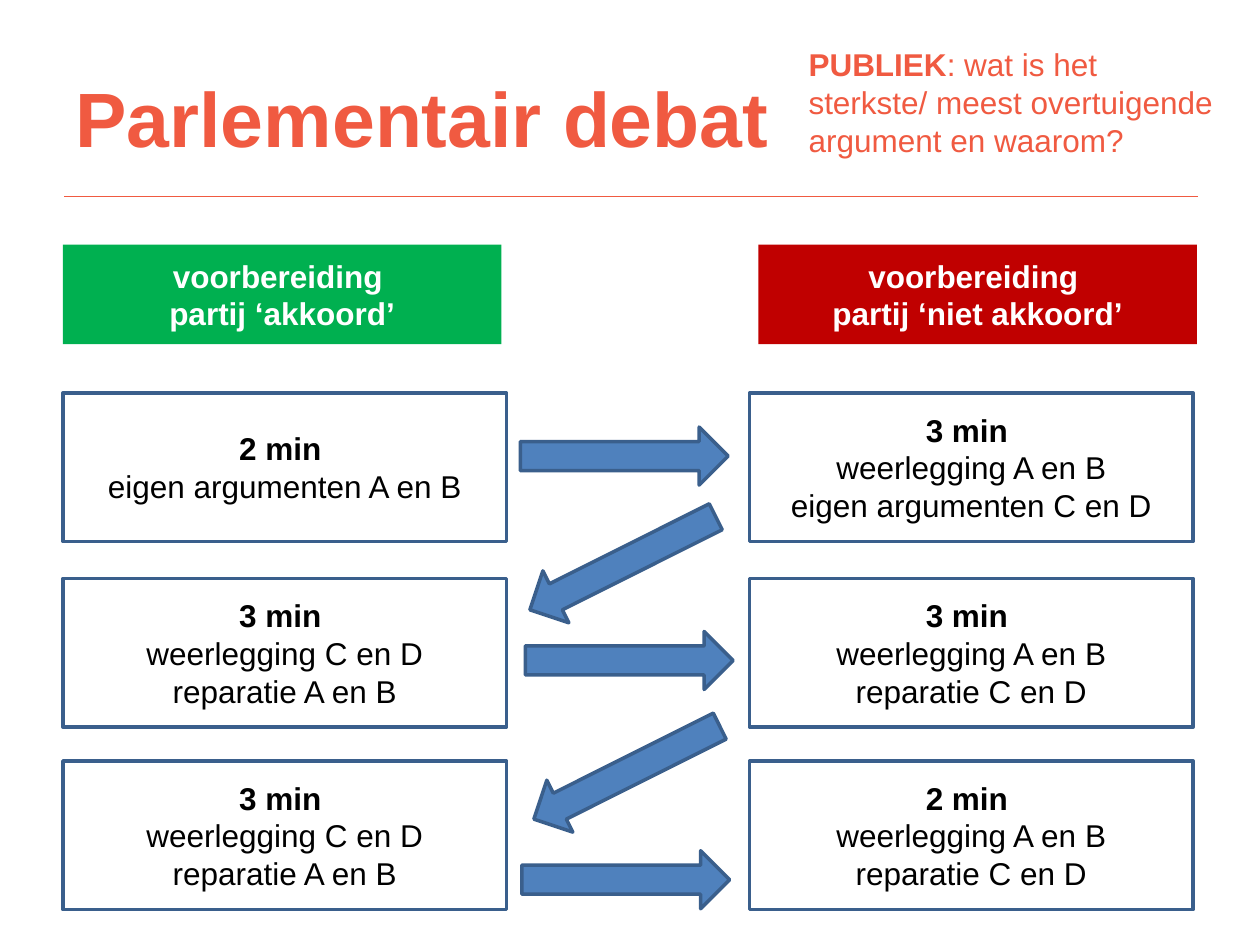
"""Build the slide that shows the speaking order of a parliamentary debate."""
from lxml import etree
from pptx import Presentation
from pptx.dml.color import RGBColor
from pptx.enum.shapes import MSO_CONNECTOR, MSO_SHAPE
from pptx.enum.text import MSO_ANCHOR, MSO_AUTO_SIZE, PP_ALIGN
from pptx.oxml.ns import qn
from pptx.util import Cm, Pt

RECTANGLE, ARROW = MSO_SHAPE.RECTANGLE, MSO_SHAPE.RIGHT_ARROW
STRAIGHT = MSO_CONNECTOR.STRAIGHT
MIDDLE, CENTER, LEFT = MSO_ANCHOR.MIDDLE, PP_ALIGN.CENTER, PP_ALIGN.LEFT
NO_FIT = MSO_AUTO_SIZE.NONE

CORAL = RGBColor(0xF0, 0x5A, 0x41)
GREEN = RGBColor(0x00, 0xB0, 0x50)
RED = RGBColor(0xC0, 0x00, 0x00)
BLUE = RGBColor(0x4F, 0x81, 0xBD)
NAVY = RGBColor(0x3A, 0x5F, 0x8C)
WHITE = RGBColor(0xFF, 0xFF, 0xFF)
BLACK = RGBColor(0x00, 0x00, 0x00)

HEADING = "Parlementair debat"
AUDIENCE = ("PUBLIEK", ": wat is het sterkste/ meest overtuigende argument en waarom?")
PARTIES = [
    (1.27, GREEN, ["voorbereiding ", "partij ‘akkoord’"]),
    (15.29, RED, ["voorbereiding ", "partij ‘niet akkoord’"]),
]
ROUNDS = [
    (7.92, ["2 min ", "eigen argumenten A en B"],
     ["3 min ", "weerlegging A en B", "eigen argumenten C en D"]),
    (11.66, ["3 min ", "weerlegging C en D", "reparatie A en B"],
     ["3 min ", "weerlegging A en B", "reparatie C en D"]),
    (15.34, ["3 min ", "weerlegging C en D", "reparatie A en B"],
     ["2 min ", "weerlegging A en B", "reparatie C en D"]),
]
TURN_LEFTS = (1.27, 15.11)
PARTY_SIZE = (8.84, 2.01)
TURN_SIZE = (8.94, 3)
ARROW_SIZE = (4.19, 1.17)
REPLY_ANGLE = 153.4
ARROWS = [
    (10.49, 8.61, 0), (10.59, 12.73, 0), (10.52, 17.15, 0),
    (10.46, 10.77, REPLY_ANGLE), (10.54, 14.99, REPLY_ANGLE),
]


def set_font(font, **changes):
    formats = {"name": "Arial", "size": Pt(18), "bold": False} | changes
    color = formats.pop("color")
    for attribute, value in formats.items():
        setattr(font, attribute, value)
    font.color.rgb = color


def add_block(slide, kind, left, top, size, fill, outline=None):
    block = slide.shapes.add_shape(kind, *map(Cm, (left, top, *size)))
    block.shadow.inherit = False
    block.fill.solid()
    block.fill.fore_color.rgb = fill
    if outline is None:
        block.line.fill.background()
    else:
        block.line.color.rgb = outline
        block.line.width = Pt(2)
    return block


def write_lines(block, lines, color, bold_lines):
    frame = block.text_frame
    frame.word_wrap = True
    frame.vertical_anchor = MIDDLE
    for number, line in enumerate(lines):
        paragraph = frame.paragraphs[0] if number == 0 else frame.add_paragraph()
        paragraph.alignment = CENTER
        run = paragraph.add_run()
        run.text = line
        set_font(run.font, color=color, bold=number < bold_lines)


def add_heading(slide):
    title = slide.shapes.title
    bounds = {"left": 1.27, "top": 0.76, "width": 22.86, "height": 3.18}
    for side, length in bounds.items():
        setattr(title, side, Cm(length))
    frame = title.text_frame
    frame.text = HEADING
    frame.auto_size = NO_FIT
    frame.vertical_anchor = MIDDLE
    frame.paragraphs[0].alignment = LEFT
    set_font(frame.paragraphs[0].runs[0].font, color=CORAL, size=Pt(44), bold=True)

    divider = slide.shapes.add_connector(STRAIGHT, Cm(1.3), Cm(3.96), Cm(24.16), Cm(3.96))
    divider.line.color.rgb = CORAL
    divider.line.width = Pt(0.5)
    etree.SubElement(divider._element.spPr, qn("a:effectLst"))


def add_audience(slide):
    question = slide.shapes.add_textbox(Cm(16.05), Cm(0.79), Cm(8.79), Cm(2.57))
    question.text_frame.word_wrap = True
    for number, part in enumerate(AUDIENCE):
        run = question.text_frame.paragraphs[0].add_run()
        run.text = part
        set_font(run.font, color=CORAL, bold=number == 0)


def main():
    deck = Presentation()
    deck.slide_width, deck.slide_height = Cm(25.4), Cm(19.05)
    slide = deck.slides.add_slide(deck.slide_layouts[5])
    add_heading(slide)
    for left, fill, lines in PARTIES:
        party = add_block(slide, RECTANGLE, left, 4.93, PARTY_SIZE, fill)
        write_lines(party, lines, WHITE, len(lines))
    for top, *turns in ROUNDS:
        for left, lines in zip(TURN_LEFTS, turns):
            turn = add_block(slide, RECTANGLE, left, top, TURN_SIZE, WHITE, NAVY)
            write_lines(turn, lines, BLACK, 1)
    for left, top, angle in ARROWS:
        arrow = add_block(slide, ARROW, left, top, ARROW_SIZE, BLUE, NAVY)
        arrow.rotation = angle
    add_audience(slide)
    deck.save("out.pptx")


if __name__ == "__main__":
    main()
